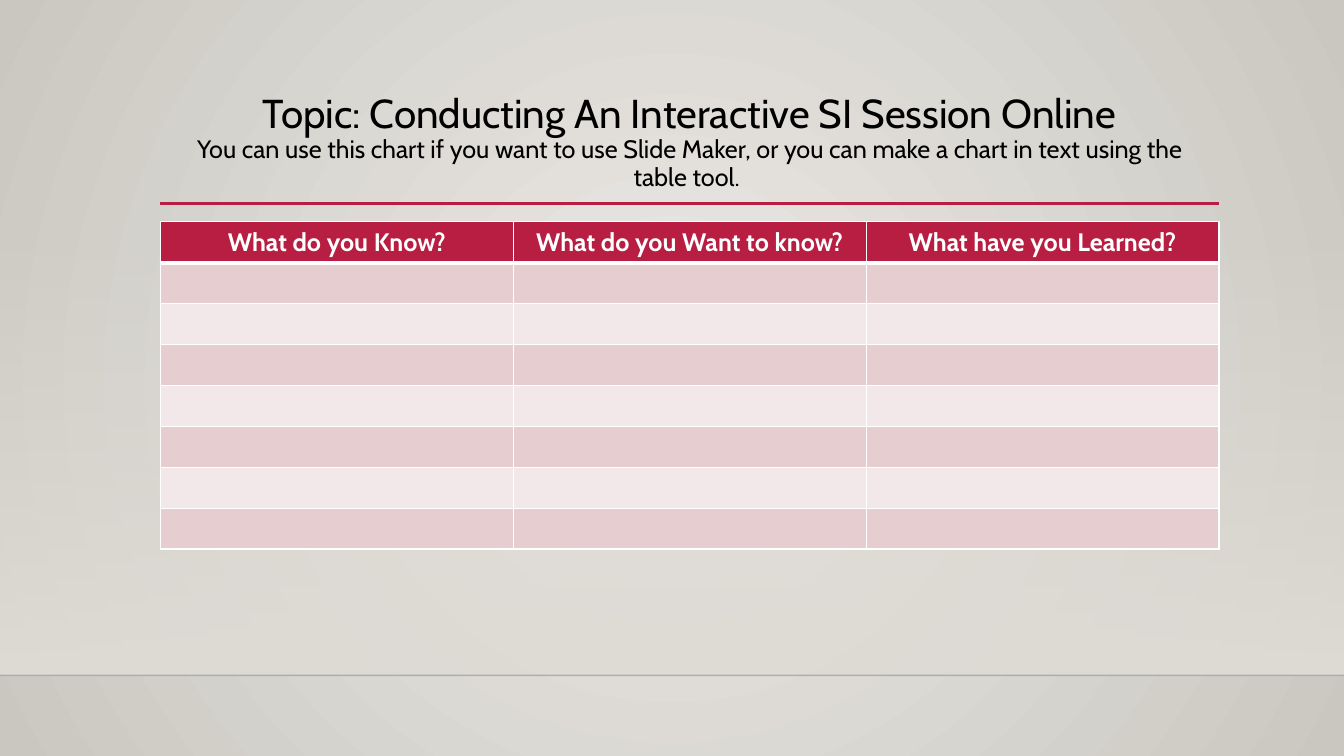
from lxml.etree import SubElement
from pptx import Presentation
from pptx.dml.color import RGBColor as RGB
from pptx.enum.shapes import MSO_CONNECTOR as CONNECTOR, MSO_SHAPE as SHAPE
from pptx.enum.text import MSO_ANCHOR as ANCHOR, PP_ALIGN as ALIGN
from pptx.oxml.ns import qn
from pptx.util import Inches, Pt

TOPIC = "Topic: Conducting An Interactive SI Session Online"
HINT = ("You can use this chart if you want to use Slide Maker, or you can "
        "make a chart in text using the table tool. ")
HEADINGS = ["What do you Know?", "What do you Want to know?", "What have you Learned?"]
EMPTY_ROWS = 7
FONT = "Cabin"
COLORS = {
    "glow": "ECEAE7", "edge": "CAC7C1", "wall": "DFDBD5", "floor_line": "000001",
    "accent": "B71E42", "odd": "E6CDCF", "even": "F3E8E9",
    "white": "FFFFFF", "black": "000000",
}
SLIDE_W, SLIDE_H = 13.33, 7.5
LEFT, WIDTH = 1.59, 10.5
WALL_TOP, FLOOR = 2.21, 6.7


def color(name):
    return RGB.from_string(COLORS[name])


def set_alpha(element, percent):
    SubElement(element, qn("a:alpha"), val=str(percent * 1000))


def set_stops(fill, *names):
    fill.gradient()
    for stop, name in zip(fill.gradient_stops, names):
        stop.color.rgb = color(name)


def add_rule(slide, left, right, y, name, width):
    rule = slide.shapes.add_connector(
        CONNECTOR.STRAIGHT, Inches(left), Inches(y), Inches(right), Inches(y))
    rule.line.color.rgb = color(name)
    rule.line.width = Pt(width)
    SubElement(rule._element.spPr, qn("a:effectLst"))
    return rule


def style_run(run, size, name, bold=False):
    run.font.name = FONT
    run.font.size = Pt(size)
    run.font.bold = bold
    run.font.color.rgb = color(name)


def add_borders(cell, widths):
    for side, width in widths.items():
        border = SubElement(cell._tc.get_or_add_tcPr(), qn(f"a:ln{side}"), w=str(Pt(width)))
        solid = SubElement(border, qn("a:solidFill"))
        SubElement(solid, qn("a:srgbClr"), val=COLORS["white"])


def add_backdrop(slide):
    set_stops(slide.background.fill, "glow", "edge")
    linear = slide._element.xpath("./p:cSld/p:bg//a:lin")[0]
    gradient = linear.getparent()
    gradient.remove(linear)
    circle = SubElement(gradient, qn("a:path"), path="circle")
    SubElement(circle, qn("a:fillToRect"), l="50000", t="50000", r="50000", b="50000")

    wall = slide.shapes.add_shape(
        SHAPE.RECTANGLE, 0, Inches(WALL_TOP), Inches(SLIDE_W), Inches(FLOOR - WALL_TOP))
    wall.shadow.inherit = False
    wall.line.fill.background()
    set_stops(wall.fill, "wall", "wall")
    wall.fill.gradient_angle = 270
    set_alpha(wall._element.spPr.xpath(".//a:srgbClr")[0], 0)

    floor = add_rule(slide, 0, SLIDE_W, FLOOR, "floor_line", 1)
    set_alpha(floor._element.spPr.xpath(".//a:srgbClr")[0], 20)


def add_title(slide):
    title = slide.shapes.add_textbox(Inches(LEFT), Inches(0.88), Inches(WIDTH), Inches(1.15))
    frame = title.text_frame
    frame.word_wrap = True
    frame.vertical_anchor = ANCHOR.TOP
    frame.text = f"{TOPIC}\v{HINT}"
    paragraph = frame.paragraphs[0]
    paragraph.alignment = ALIGN.CENTER
    paragraph.line_spacing = 0.9
    for run, size in zip(paragraph.runs, (28.8, 18)):
        style_run(run, size, "black")


def add_chart_table(slide):
    table = slide.shapes.add_table(
        EMPTY_ROWS + 1, len(HEADINGS),
        Inches(LEFT), Inches(2.2), Inches(WIDTH), Inches(3.25)).table
    for row_index, row in enumerate(table.rows):
        name = "accent" if row_index == 0 else ("even", "odd")[row_index % 2]
        widths = {"L": 1, "R": 1,
                  "T": 3 if row_index == 1 else 1,
                  "B": 3 if row_index == 0 else 1}
        for cell in row.cells:
            add_borders(cell, widths)
            cell.fill.solid()
            cell.fill.fore_color.rgb = color(name)
    for cell, heading in zip(table.rows[0].cells, HEADINGS):
        cell.text_frame.text = heading
        paragraph = cell.text_frame.paragraphs[0]
        paragraph.alignment = ALIGN.CENTER
        style_run(paragraph.runs[0], 18, "white", True)


def main():
    deck = Presentation()
    deck.slide_width, deck.slide_height = Inches(SLIDE_W), Inches(SLIDE_H)
    slide = deck.slides.add_slide(deck.slide_layouts[6])
    add_backdrop(slide)
    add_rule(slide, LEFT, LEFT + WIDTH, 2.02, "accent", 2.5)
    add_title(slide)
    add_chart_table(slide)
    deck.save("out.pptx")


if __name__ == "__main__":
    main()
